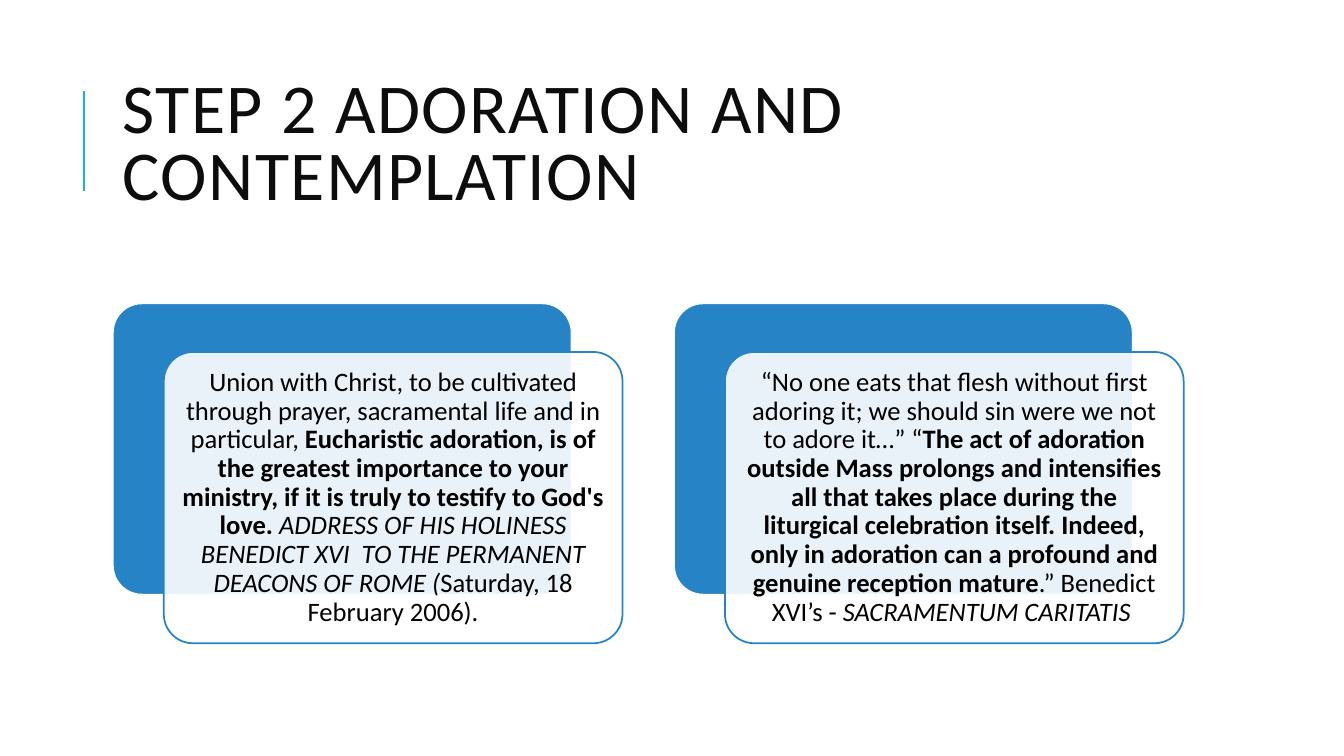
from dataclasses import dataclass

from lxml import etree
from pptx import Presentation
from pptx import util as u
from pptx.dml.color import RGBColor
from pptx.enum import shapes, text
from pptx.oxml.ns import qn


@dataclass(frozen=True)
class Theme:
    accent: str = "1CADE4"
    panel: str = "2683C6"
    paper: str = "FFFFFF"
    heading: str = "0D0D0D"
    body: str = "000000"
    font: str = "Calibri"
    heading_size: float = 50
    body_size: float = 19
    accent_width: float = 1.5
    outline_width: float = 1.25


class SlideBuilder:
    """Draws on one slide; every length is a percentage of the slide's size."""

    def __init__(self, presentation, theme):
        self.presentation = presentation
        self.theme = theme
        self.slide = presentation.slides.add_slide(presentation.slide_layouts[6])

    def x(self, percent):
        return u.Emu(round(self.presentation.slide_width * percent / 100))

    def y(self, percent):
        return u.Emu(round(self.presentation.slide_height * percent / 100))

    def box(self, left, top, width, height):
        return self.x(left), self.y(top), self.x(width), self.y(height)

    def style_run(self, run, size, color, bold=False, italic=False):
        font = run.font
        font.name = self.theme.font
        font.size = u.Pt(size)
        font.color.rgb = RGBColor.from_string(color)
        font.bold = bold
        font.italic = italic

    def rule(self, x, top, bottom):
        line = self.slide.shapes.add_connector(
            shapes.MSO_CONNECTOR.STRAIGHT,
            self.x(x), self.y(bottom), self.x(x), self.y(top))
        line.line.color.rgb = RGBColor.from_string(self.theme.accent)
        line.line.width = u.Pt(self.theme.accent_width)
        etree.SubElement(line._element.spPr, qn("a:effectLst"))

    def title(self, wording, *place):
        frame = self.slide.shapes.add_textbox(*self.box(*place)).text_frame
        frame.word_wrap = True
        frame.vertical_anchor = text.MSO_ANCHOR.MIDDLE
        frame.text = wording
        paragraph = frame.paragraphs[0]
        paragraph.line_spacing = 0.8
        run = paragraph.runs[0]
        self.style_run(run, self.theme.heading_size, self.theme.heading)
        run.font._element.set("spc", "100")  # letter spacing of 1 pt

    def panel(self, fill, outline, place, opacity=100):
        shape = self.slide.shapes.add_shape(
            shapes.MSO_SHAPE.ROUNDED_RECTANGLE, *self.box(*place))
        shape.adjustments[0] = 0.1
        shape.shadow.inherit = False
        shape.fill.solid()
        shape.fill.fore_color.rgb = RGBColor.from_string(fill)
        if opacity < 100:
            color = shape.fill._xPr.find(".//" + qn("a:srgbClr"))
            etree.SubElement(color, qn("a:alpha"), val=str(opacity * 1000))
        shape.line.color.rgb = RGBColor.from_string(outline)
        shape.line.width = u.Pt(self.theme.outline_width)
        return shape

    def quote_card(self, passages, left, top, width, height, shift_x, shift_y):
        """A solid panel with a translucent, shifted panel that holds the quote."""
        theme = self.theme
        self.panel(theme.panel, theme.paper, (left, top, width, height))
        front = self.panel(theme.paper, theme.panel,
                           (left + shift_x, top + shift_y, width, height), opacity=90)
        frame = front.text_frame
        frame.word_wrap = True
        frame.vertical_anchor = text.MSO_ANCHOR.MIDDLE
        frame.margin_left = frame.margin_right = u.Inches(0.08)
        frame.margin_top = frame.margin_bottom = u.Inches(0.08)
        paragraph = frame.paragraphs[0]
        paragraph.alignment = text.PP_ALIGN.CENTER
        paragraph.line_spacing = 0.9
        for wording, emphasis in passages:
            run = paragraph.add_run()
            run.text = wording
            self.style_run(run, theme.body_size, theme.body,
                           bold=emphasis == "bold", italic=emphasis == "italic")


QUOTES = [
    [
        ("Union with Christ, to be cultivated through prayer, sacramental life "
         "and in particular, ", "plain"),
        ("Eucharistic adoration, is of the greatest importance to your ministry, "
         "if it is truly to testify to God's love. ", "bold"),
        ("ADDRESS OF HIS HOLINESS BENEDICT XVI  TO THE PERMANENT DEACONS OF ROME (",
         "italic"),
        ("Saturday, 18 February 2006).", "plain"),
    ],
    [
        ("“No one eats that flesh without first adoring it; we should sin were we "
         "not to adore it…” “", "plain"),
        ("The act of adoration outside Mass prolongs and intensifies all that takes "
         "place during the liturgical celebration itself. Indeed, only in adoration "
         "can a profound and genuine reception mature", "bold"),
        (".” Benedict XVI’s - ", "plain"),
        ("SACRAMENTUM CARITATIS ", "italic"),
    ],
]
MARGIN = 8.4
CARD_STEP = 41.75


def main():
    presentation = Presentation()
    presentation.slide_width = u.Inches(13.33)
    presentation.slide_height = u.Inches(7.5)
    builder = SlideBuilder(presentation, Theme())
    builder.rule(6.23, top=12, bottom=25.33)
    builder.title("STEP 2 ADORATION AND CONTEMPLATION", MARGIN, 8.53, 79.75, 21.87)
    for column, passages in enumerate(QUOTES):
        builder.quote_card(passages, MARGIN + column * CARD_STEP, 40.13,
                           width=34.13, height=38.53, shift_x=3.79, shift_y=6.43)
    presentation.save("out.pptx")


if __name__ == "__main__":
    main()
